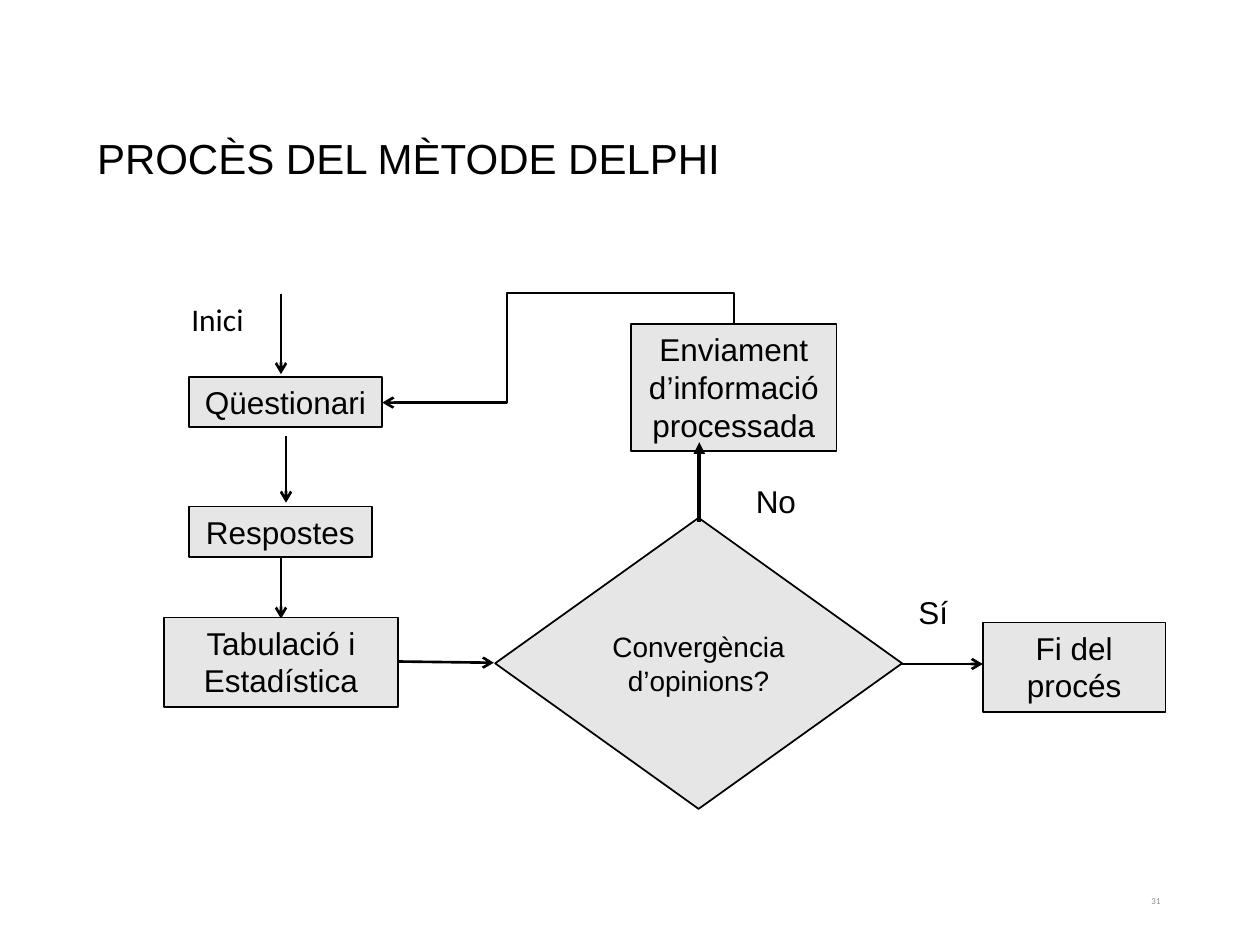
from pptx import Presentation
from pptx.dml.color import RGBColor
from pptx.enum.shapes import MSO_CONNECTOR, MSO_SHAPE
from pptx.enum.text import MSO_ANCHOR, MSO_AUTO_SIZE, PP_ALIGN
from pptx.oxml.ns import qn
from pptx.util import Inches, Pt
from lxml.etree import SubElement

BLACK, LIGHT_GRAY, NUMBER_GRAY = "000000", "E7E6E6", "8C8C8C"
ONE_LINE = 0.4
TWO_LINES = 0.71


def color(hex_string):
    return RGBColor.from_string(hex_string)


def place(shape, left, top, width, height):
    shape.left, shape.top = Inches(left), Inches(top)
    shape.width, shape.height = Inches(width), Inches(height)


def write(shape, text, size=18, font="Arial", ink=BLACK,
          align=PP_ALIGN.LEFT, anchor=MSO_ANCHOR.TOP, wrap=True):
    frame = shape.text_frame
    frame.word_wrap = wrap
    frame.auto_size = MSO_AUTO_SIZE.NONE
    frame.vertical_anchor = anchor
    frame.text = text
    paragraph = frame.paragraphs[0]
    paragraph.alignment = align
    paragraph.font.size = Pt(size)
    paragraph.font.name = font
    paragraph.font.color.rgb = color(ink)


def add_title(slide, text):
    title = slide.shapes.title
    place(title, 0.67, 0.6, 8.35, 0.9)
    write(title, text, size=24, anchor=MSO_ANCHOR.BOTTOM)


def add_label(slide, text, left, top, width, height=ONE_LINE, **style):
    label = slide.shapes.add_textbox(
        Inches(left), Inches(top), Inches(width), Inches(height))
    write(label, text, **style)


def add_step(slide, text, left, top, width, height,
             kind=MSO_SHAPE.RECTANGLE, **style):
    step = slide.shapes.add_shape(
        kind, Inches(left), Inches(top), Inches(width), Inches(height))
    step.shadow.inherit = False
    step.fill.solid()
    step.fill.fore_color.rgb = color(LIGHT_GRAY)
    step.line.color.rgb = color(BLACK)
    step.line.width = Pt(1)
    write(step, text, align=PP_ALIGN.CENTER, **style)


def add_arrow(slide, start, end, width=1.5, head="arrow",
              kind=MSO_CONNECTOR.STRAIGHT):
    points = [Inches(value) for value in (*start, *end)]
    arrow = slide.shapes.add_connector(kind, *points)
    arrow.line.color.rgb = color(BLACK)
    arrow.line.width = Pt(width)
    SubElement(arrow.line._get_or_add_ln(), qn("a:tailEnd"), type=head)
    SubElement(arrow._element.spPr, qn("a:effectLst"))
    return arrow


def add_feedback_arrow(slide):
    """Four-segment elbow from the processed information to the questionnaire.

    The end points are given before the 270 degree turn about the centre.
    """
    arrow = add_arrow(slide, (4.74, 4.28), (4.12, 1.49),
                      kind=MSO_CONNECTOR.ELBOW)
    properties = arrow._element.spPr
    properties.find(qn("a:xfrm")).set("rot", str(270 * 60000))
    geometry = properties.find(qn("a:prstGeom"))
    geometry.set("prst", "bentConnector4")
    guides = geometry.find(qn("a:avLst"))
    if guides is None:
        guides = SubElement(geometry, qn("a:avLst"))
    for name, value in (("adj1", -40500), ("adj2", 64600)):
        SubElement(guides, qn("a:gd"), name=name, fmla=f"val {value}")


def main():
    presentation = Presentation()
    presentation.slide_width = Inches(10)
    presentation.slide_height = Inches(7.5)
    slide = presentation.slides.add_slide(presentation.slide_layouts[5])

    add_title(slide, "PROCÈS DEL MÈTODE DELPHI")
    add_label(slide, "31", 7.06, 6.95, 2.25, size=5.1, font="Calibri",
              ink=NUMBER_GRAY, align=PP_ALIGN.RIGHT, anchor=MSO_ANCHOR.MIDDLE)
    add_label(slide, "Inici", 1.42, 2.33, 0.65, font="Calibri")
    add_label(slide, "No", 5.9, 3.78, 0.53, wrap=False)
    add_label(slide, "Sí", 7.19, 4.66, 0.44, wrap=False)

    for start, end in (
        ((2.23, 2.33), (2.23, 2.97)),
        ((2.27, 3.46), (2.27, 3.99)),
        ((2.23, 4.42), (2.23, 4.91)),
        ((3.16, 5.25), (3.92, 5.26)),
        ((7.15, 5.27), (7.8, 5.27)),
    ):
        add_arrow(slide, start, end)

    for text, left, top, width, height in (
        ("Qüestionari", 1.5, 2.99, 1.53, ONE_LINE),
        ("Respostes", 1.5, 4.02, 1.45, ONE_LINE),
        ("Tabulació i Estadística", 1.3, 4.9, 1.86, TWO_LINES),
        ("Fi del procés", 7.8, 4.94, 1.45, TWO_LINES),
        ("Enviament d’informació processada", 5.01, 2.57, 1.63, 1.01),
    ):
        add_step(slide, text, left, top, width, height)
    add_step(slide, "Convergència d’opinions?", 3.93, 4.11, 3.23, 2.31,
             kind=MSO_SHAPE.FLOWCHART_DECISION, size=16,
             anchor=MSO_ANCHOR.MIDDLE)

    add_feedback_arrow(slide)
    add_arrow(slide, (5.55, 4.14), (5.55, 3.51), width=2.25, head="triangle")

    presentation.save("out.pptx")


if __name__ == "__main__":
    main()
